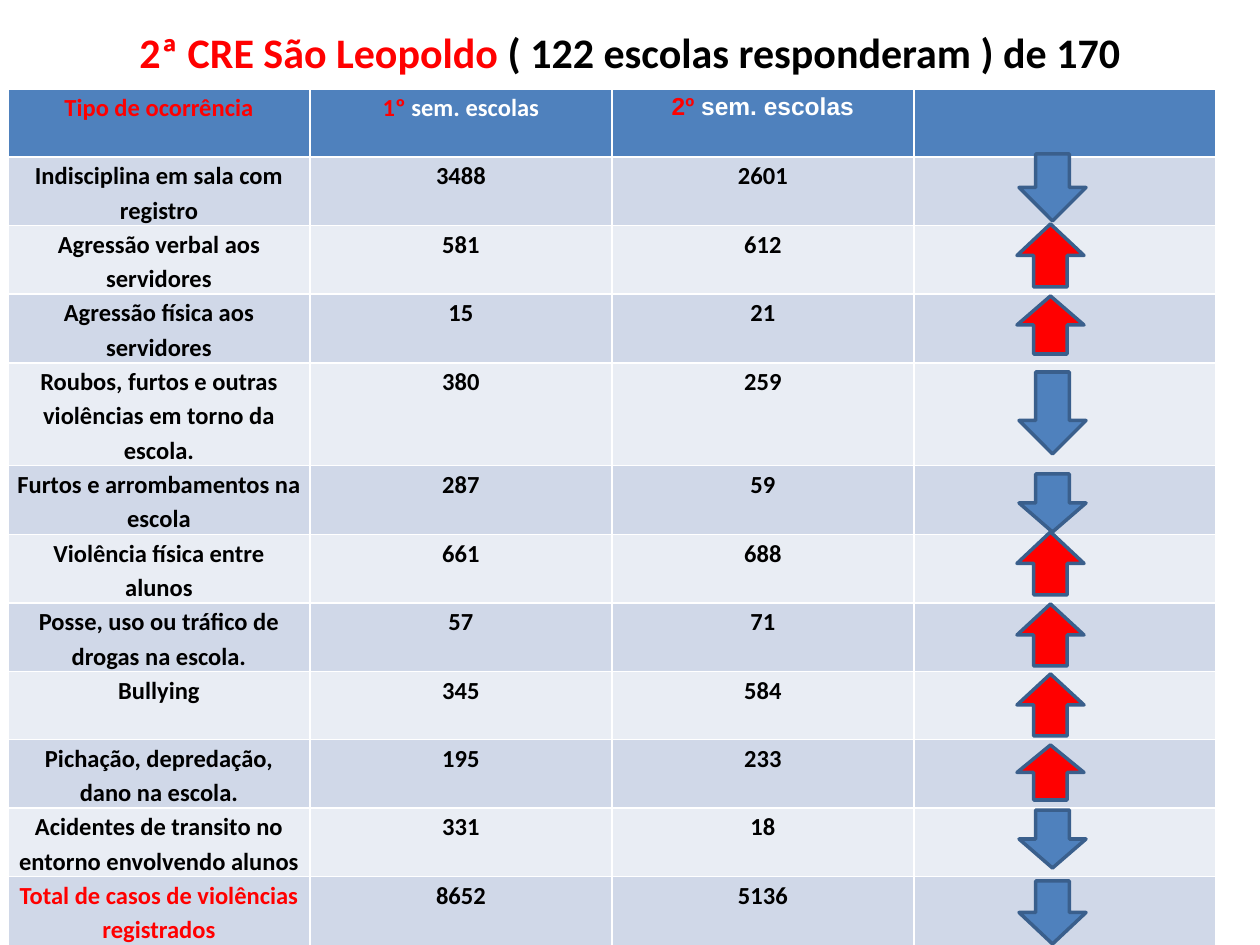
from pptx import Presentation
from pptx import util as u
from pptx.dml import color
from pptx.enum import shapes, text

COLORS = {
    "red": "FF0000", "black": "000000", "white": "FFFFFF", "blue": "4F81BD",
    "outline": "3A5F8C", "band": "D0D8E8", "pale": "E9EDF4",
}
ROW_HEIGHT, TALL_ROW = 68, 103
HEADERS = [
    ([("Tipo de ocorrência", "red")], "Calibri"),
    ([("1º", "red"), (" sem. escolas", "white")], "Calibri"),
    ([("2º", "red"), (" sem. escolas", "white")], "Arial"),
]
INCIDENTS = [
    ("Indisciplina em sala com registro", 3488, 2601, 154, 67),
    ("Agressão verbal aos servidores", 581, 612, 224, 63),
    ("Agressão física aos servidores", 15, 21, 296, 58),
    ("Roubos, furtos e outras violências em torno da escola.", 380, 259, 372, 82),
    ("Furtos e arrombamentos na escola", 287, 59, 474, 58),
    ("Violência física entre alunos", 661, 688, 532, 63),
    ("Posse, uso ou tráfico de drogas na escola.", 57, 71, 604, 62),
    ("Bullying", 345, 584, 674, 62),
    ("Pichação, depredação, dano na escola.", 195, 233, 745, 55),
    ("Acidentes de transito no entorno envolvendo alunos", 331, 18, 810, 58),
    ("Total de casos de violências registrados", 8652, 5136, 881, 63),
]


def px(length):
    return u.Emu(length * 914400 // 126)


def paint(fill, name):
    fill.solid()
    fill.fore_color.rgb = color.RGBColor.from_string(COLORS[name])


class SlideBuilder:
    def __init__(self, page):
        self.page = page

    def add_spans(self, para, spans, size, font="Calibri"):
        para.alignment = text.PP_ALIGN.CENTER
        for words, ink in spans:
            span = para.add_run()
            span.text = words
            span.font.name = font
            span.font.size = u.Pt(size)
            span.font.bold = True
            span.font.color.rgb = color.RGBColor.from_string(COLORS[ink])

    def title(self, spans, left, top, width, height):
        box = self.page.shapes.title
        box.left, box.top, box.width, box.height = map(px, (left, top, width, height))
        frame = box.text_frame
        frame.auto_size = text.MSO_AUTO_SIZE.NONE
        frame.vertical_anchor = text.MSO_ANCHOR.MIDDLE
        self.add_spans(frame.paragraphs[0], spans, 24)

    def table(self, left, top, column_width, heights, columns):
        frame = self.page.shapes.add_table(
            len(heights), columns, px(left), px(top),
            px(column_width * columns), px(sum(heights)))
        grid = frame.table
        for column in grid.columns:
            column.width = px(column_width)
        for row, height in zip(grid.rows, heights):
            row.height = px(height)
        return grid

    def cell(self, cell, spans, fill, font="Calibri"):
        paint(cell.fill, fill)
        if not spans:
            return
        cell.margin_left = cell.margin_right = px(9)
        cell.margin_top = cell.margin_bottom = 0
        para = cell.text_frame.paragraphs[0]
        para.line_spacing = 1.15
        self.add_spans(para, spans, 14, font)

    def arrow(self, rising, top, height):
        kind = shapes.MSO_SHAPE.UP_ARROW if rising else shapes.MSO_SHAPE.DOWN_ARROW
        left = 1017 if rising else 1019
        arrow = self.page.shapes.add_shape(kind, px(left), px(top), px(67), px(height))
        arrow.shadow.inherit = False
        paint(arrow.fill, "red" if rising else "blue")
        paint(arrow.line.fill, "outline")
        arrow.line.width = u.Pt(2)


def main():
    deck = Presentation()
    deck.slide_width, deck.slide_height = px(1260), px(945)
    builder = SlideBuilder(deck.slides.add_slide(deck.slide_layouts[5]))
    builder.title(
        [("2ª CRE São Leopoldo ", "red"), ("( 122 escolas responderam ) de 170", "black")],
        0, 17, 1260, 69)

    heights = [ROW_HEIGHT] * (len(INCIDENTS) + 1)
    heights[4] = TALL_ROW
    grid = builder.table(8, 89, 302, heights, 4)
    for column, (spans, font) in enumerate(HEADERS):
        builder.cell(grid.cell(0, column), spans, "blue", font)
    builder.cell(grid.cell(0, 3), [], "blue")

    for row, (name, first, second, top, height) in enumerate(INCIDENTS, 1):
        fill = "band" if row % 2 else "pale"
        ink = "red" if row == len(INCIDENTS) else "black"
        contents = [[(name, ink)], [(str(first), "black")], [(str(second), "black")], []]
        for column, spans in enumerate(contents):
            builder.cell(grid.cell(row, column), spans, fill)
        builder.arrow(second > first, top, height)
    deck.save("out.pptx")


if __name__ == "__main__":
    main()
